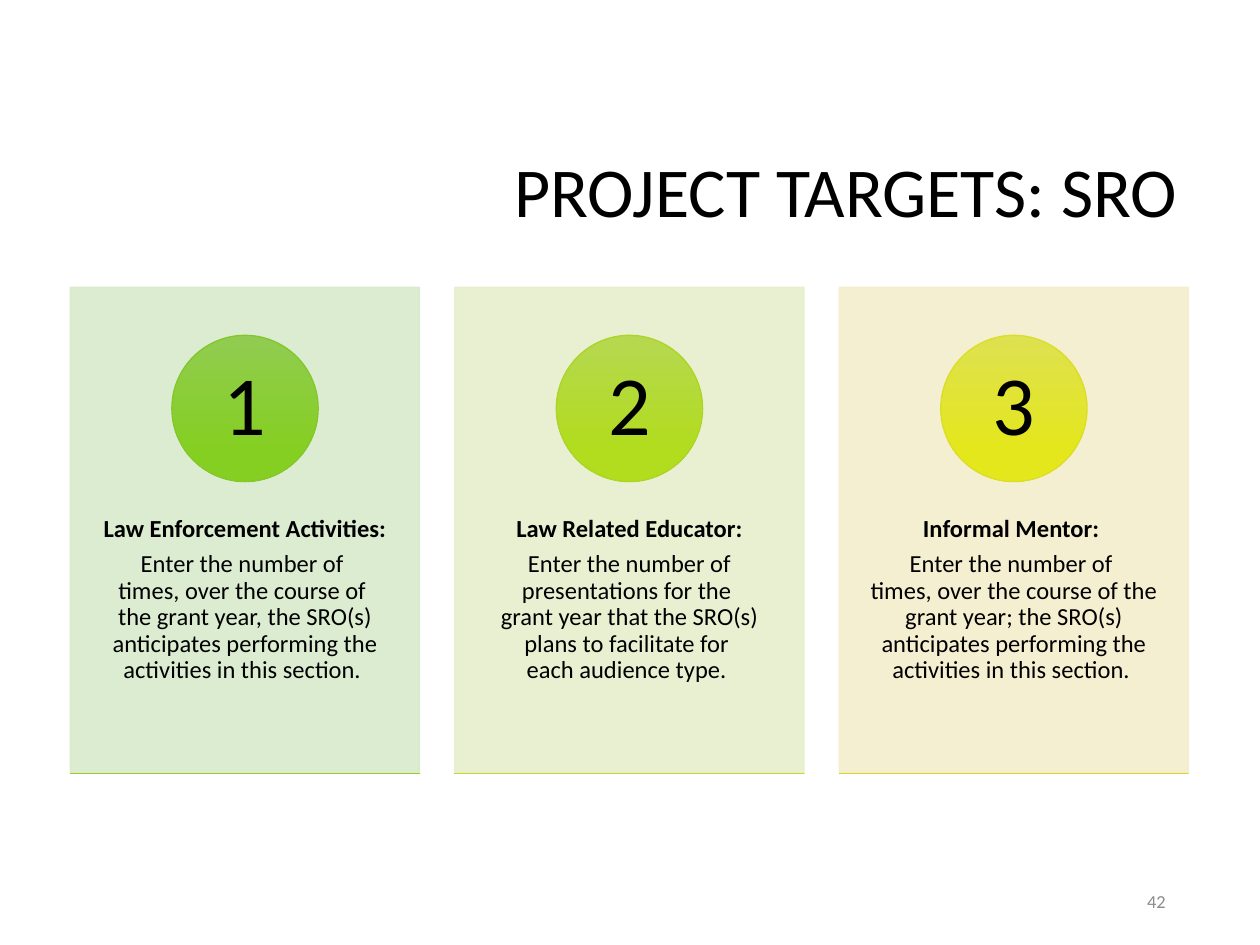
from lxml.etree import SubElement
from pptx import Presentation
from pptx.dml.color import RGBColor
from pptx.enum.shapes import MSO_SHAPE
from pptx.enum.text import MSO_ANCHOR, PP_ALIGN
from pptx.oxml.ns import qn
from pptx.util import Cm, Pt

BLACK = RGBColor(0, 0, 0)
GRAY = RGBColor(0x8C, 0x8C, 0x8C)
FONT = "Calibri"

# Per card: pale panel, then top, bottom and edge colours of the disc and the rule
GREEN = [RGBColor.from_string(c) for c in
         ("D9EBCD", "91CC51", "85CF22", "84C72A", "A2D250", "9BD520", "98CD28")]
LIME = [RGBColor.from_string(c) for c in
        ("E7EFCD", "B5D850", "B2DC1E", "ADD426", "CADD50", "CBE31B", "C4DA24")]
GOLD = [RGBColor.from_string(c) for c in
        ("F4EECD", "DEE150", "E4E71C", "DBDE25", "E4D651", "EAD91D", "E1D126")]

CARDS = [
    ("Law Enforcement Activities:",
     "Enter the number of \ntimes, over the course of \nthe grant year, the SRO(s) "
     "anticipates performing the activities in this section. ", GREEN),
    ("Law Related Educator:",
     "Enter the number of presentations for the \ngrant year that the SRO(s) "
     "plans to facilitate for \neach audience type. ", LIME),
    ("Informal Mentor: ",
     "Enter the number of \ntimes, over the course of the grant year; the SRO(s) "
     "anticipates performing the activities in this section. ", GOLD),
]


def add_shaded(kind, box, top, base, edge):
    """Add a shape shaded from top to base colour."""
    shape = slide.shapes.add_shape(kind, *box)
    shape.shadow.inherit = False
    shape.fill.gradient()
    shape.fill.gradient_angle = 270
    first, last = shape.fill.gradient_stops
    first.color.rgb, last.color.rgb = top, base
    first.position, last.position = 0, 0.78
    shape.line.color.rgb = edge
    shape.line.width = Pt(0.75)


def add_text(box, lines, size, color=BLACK, align=PP_ALIGN.CENTER,
             pad=(0.25, 0.13), anchor=MSO_ANCHOR.MIDDLE):
    """Add a wrapped text box with one paragraph per line and return its paragraphs."""
    frame = slide.shapes.add_textbox(*box).text_frame
    frame.word_wrap = True
    frame.vertical_anchor = anchor
    frame.margin_left = frame.margin_right = Cm(pad[0])
    frame.margin_top = frame.margin_bottom = Cm(pad[1])
    for i, line in enumerate(lines):
        para = frame.add_paragraph() if i else frame.paragraphs[0]
        para.text = line
        para.alignment = align
        for run in para.runs:
            run.font.name, run.font.size = FONT, Pt(size)
            run.font.color.rgb = color
    return frame.paragraphs


deck = Presentation()
deck.slide_width, deck.slide_height = Cm(25.4), Cm(19.05)
slide = deck.slides.add_slide(deck.slide_layouts[5])

# Title
title = slide.shapes.title
title.left, title.top, title.width, title.height = Cm(6.05), Cm(2.13), Cm(17.93), Cm(3.58)
title.text_frame.text = "PROJECT TARGETS: SRO"
title.text_frame.vertical_anchor = MSO_ANCHOR.MIDDLE
para = title.text_frame.paragraphs[0]
para.alignment, para.line_spacing = PP_ALIGN.RIGHT, 0.9
font = para.runs[0].font
font.name, font.size = FONT, Pt(40)
font.color.rgb = BLACK

# Cards
wide, tall, top = 7.04, 9.8, 5.79
disc, label = 2.95, 2.08
for i, (head, body, tones) in enumerate(CARDS):
    left = 1.42 + i * 7.75
    mid = left + wide / 2

    # Panel
    panel = slide.shapes.add_shape(MSO_SHAPE.RECTANGLE, Cm(left), Cm(top), Cm(wide), Cm(tall))
    panel.shadow.inherit = False
    panel.fill.solid()
    panel.fill.fore_color.rgb = panel.line.color.rgb = tones[0]
    panel.line.width = Pt(0.75)
    for color in panel._element.spPr.iter(qn("a:srgbClr")):
        SubElement(color, qn("a:alpha"), val="90000")

    # Heading and text
    paras = add_text((Cm(left), Cm(9.5), Cm(wide), Cm(5.89)), (head, body), 14,
                     pad=(0.56, 0.91), anchor=MSO_ANCHOR.TOP)
    for para in paras:
        para.line_spacing, para.space_after = 0.9, Pt(4.9)
    paras[0].runs[0].font.bold = True

    # Numbered disc
    add_shaded(MSO_SHAPE.OVAL, (Cm(mid - disc / 2), Cm(6.76), Cm(disc), Cm(disc)), *tones[1:4])
    number = add_text((Cm(mid - label / 2), Cm(7.19), Cm(label), Cm(label)), [str(i + 1)], 48,
                      pad=(0.23, 0.03))
    number[0].line_spacing = 0.9

    # Bottom rule
    add_shaded(MSO_SHAPE.RECTANGLE, (Cm(left), Cm(top + tall), Cm(wide), Cm(0.01)), *tones[4:])

# Page number
add_text((Cm(18.26), Cm(17.65), Cm(5.49), Cm(1.02)), ["42"], 10.5, GRAY, PP_ALIGN.RIGHT)

deck.save("out.pptx")
